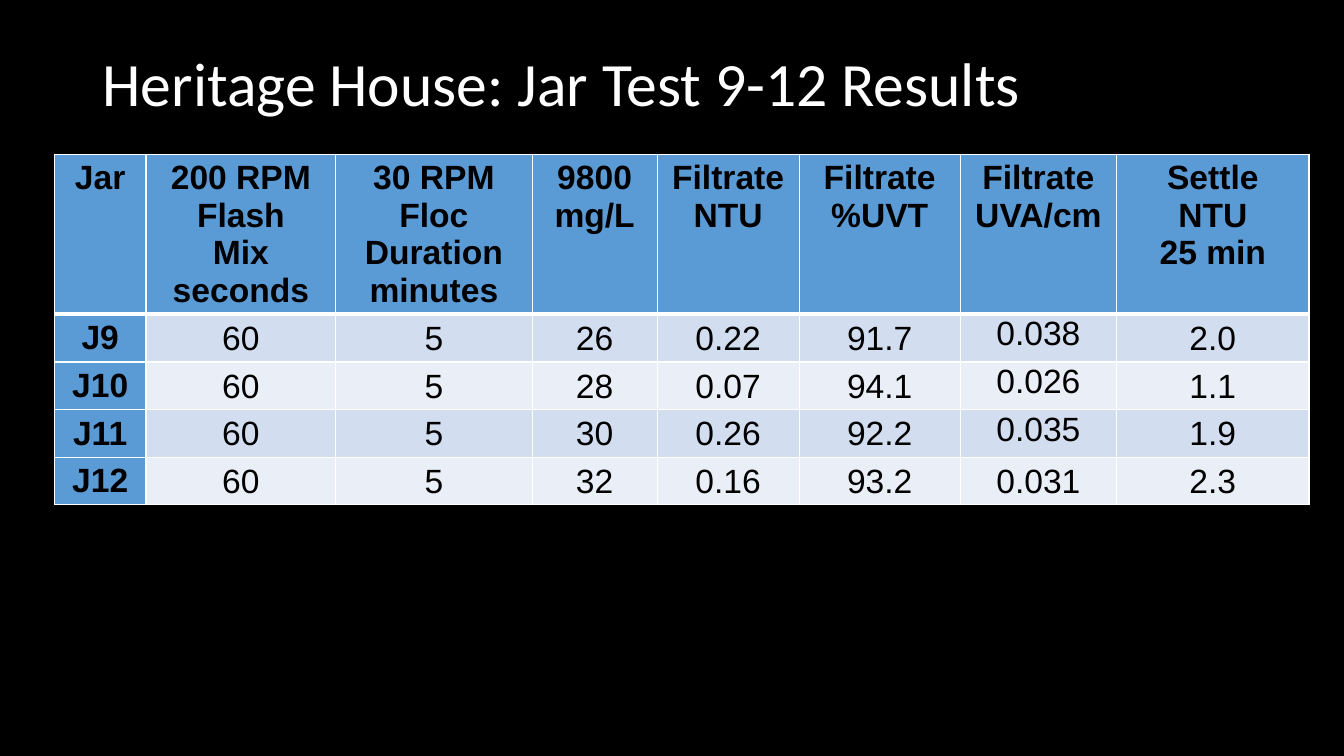
from dataclasses import dataclass

from lxml import etree
from pptx import Presentation
from pptx.dml.color import RGBColor
from pptx.enum.text import MSO_ANCHOR, PP_ALIGN
from pptx.oxml.ns import qn
from pptx.util import Cm, Pt

LEFT, CENTER = PP_ALIGN.LEFT, PP_ALIGN.CENTER
TOP, MIDDLE = MSO_ANCHOR.TOP, MSO_ANCHOR.MIDDLE
TITLE_ONLY = 5


@dataclass(frozen=True)
class Theme:
    background: str = "000000"
    title: str = "FFFFFF"
    text: str = "000000"
    border: str = "FFFFFF"
    heading: str = "5B9BD5"
    bands: tuple = ("D2DEEF", "EAEFF7")
    title_font: str = "Calibri"
    table_font: str = "Arial"
    title_size: int = 44
    table_size: int = 24


theme = Theme()


def style_font(font, name, size, color, bold):
    for attribute, value in {"name": name, "size": Pt(size), "bold": bold}.items():
        setattr(font, attribute, value)
    font.color.rgb = RGBColor.from_string(color)


def add_border(cell, side, points):
    properties = cell._tc.get_or_add_tcPr()
    line = etree.SubElement(properties, qn(f"a:ln{side}"), w=str(Pt(points)))
    fill = etree.SubElement(line, qn("a:solidFill"))
    etree.SubElement(fill, qn("a:srgbClr"), val=theme.border)


# Slide
presentation = Presentation()
presentation.slide_width, presentation.slide_height = Cm(33.87), Cm(19.05)
slide = presentation.slides.add_slide(presentation.slide_layouts[TITLE_ONLY])
slide.background.fill.solid()
slide.background.fill.fore_color.rgb = RGBColor.from_string(theme.background)

# Title
title = slide.shapes.title
title_place = {"left": 2.33, "top": 0.33, "width": 29.21, "height": 3.68}
for attribute, value in title_place.items():
    setattr(title, attribute, Cm(value))
title.text_frame.text = "Heritage House: Jar Test 9-12 Results"
title.text_frame.vertical_anchor = MIDDLE
title.text_frame.word_wrap = True
paragraph = title.text_frame.paragraphs[0]
paragraph.alignment = LEFT
paragraph.line_spacing = 0.9
style_font(paragraph.runs[0].font, theme.title_font, theme.title_size, theme.title, False)

# Jar test results
headings = [
    "Jar", "200 RPM\nFlash\nMix\nseconds", "30 RPM Floc\nDuration\nminutes",
    "9800\nmg/L", "Filtrate\nNTU", "Filtrate\n%UVT", "Filtrate\nUVA/cm",
    "Settle\nNTU\n25 min",
]
results = [
    ["J9", "60", "5", "26", "0.22", "91.7", "0.038", "2.0"],
    ["J10", "60", "5", "28", "0.07", "94.1", "0.026", "1.1"],
    ["J11", "60", "5", "30", "0.26", "92.2", "0.035", "1.9"],
    ["J12", "60", "5", "32", "0.16", "93.2", "0.031", "2.3"],
]
rows = [headings] + results
column_widths = [2.31, 4.78, 4.95, 3.15, 3.58, 4.06, 3.94, 4.85]
row_heights = [4.03] + [1.2] * len(results)
uva_column = headings.index("Filtrate\nUVA/cm")
value_margins = {"margin_left": 0.03, "margin_top": 0.03,
                 "margin_right": 0.03, "margin_bottom": 0}

# Table grid
table = slide.shapes.add_table(
    len(rows), len(headings), Cm(1.37), Cm(3.89),
    Cm(sum(column_widths)), Cm(sum(row_heights))).table
for column, width in zip(table.columns, column_widths):
    column.width = Cm(width)
for row, height in zip(table.rows, row_heights):
    row.height = Cm(height)

# Table cells
for row_index, row in enumerate(rows):
    for column_index, text in enumerate(row):
        cell = table.cell(row_index, column_index)
        is_heading = row_index == 0 or column_index == 0
        is_raised = column_index == uva_column and row_index < len(results)

        for side in "LRTB":
            under_heading = (row_index, side) in ((0, "B"), (1, "T"))
            add_border(cell, side, 3 if under_heading else 1)
        color = theme.heading if is_heading else theme.bands[(row_index - 1) % 2]
        cell.fill.solid()
        cell.fill.fore_color.rgb = RGBColor.from_string(color)

        cell.text = text
        cell.vertical_anchor = TOP if is_heading or is_raised else MIDDLE
        if not is_heading:
            for attribute, value in value_margins.items():
                setattr(cell, attribute, Cm(value))
        for paragraph in cell.text_frame.paragraphs:
            paragraph.alignment = CENTER
            style_font(paragraph.runs[0].font, theme.table_font, theme.table_size,
                       theme.text, is_heading)

presentation.save("out.pptx")
